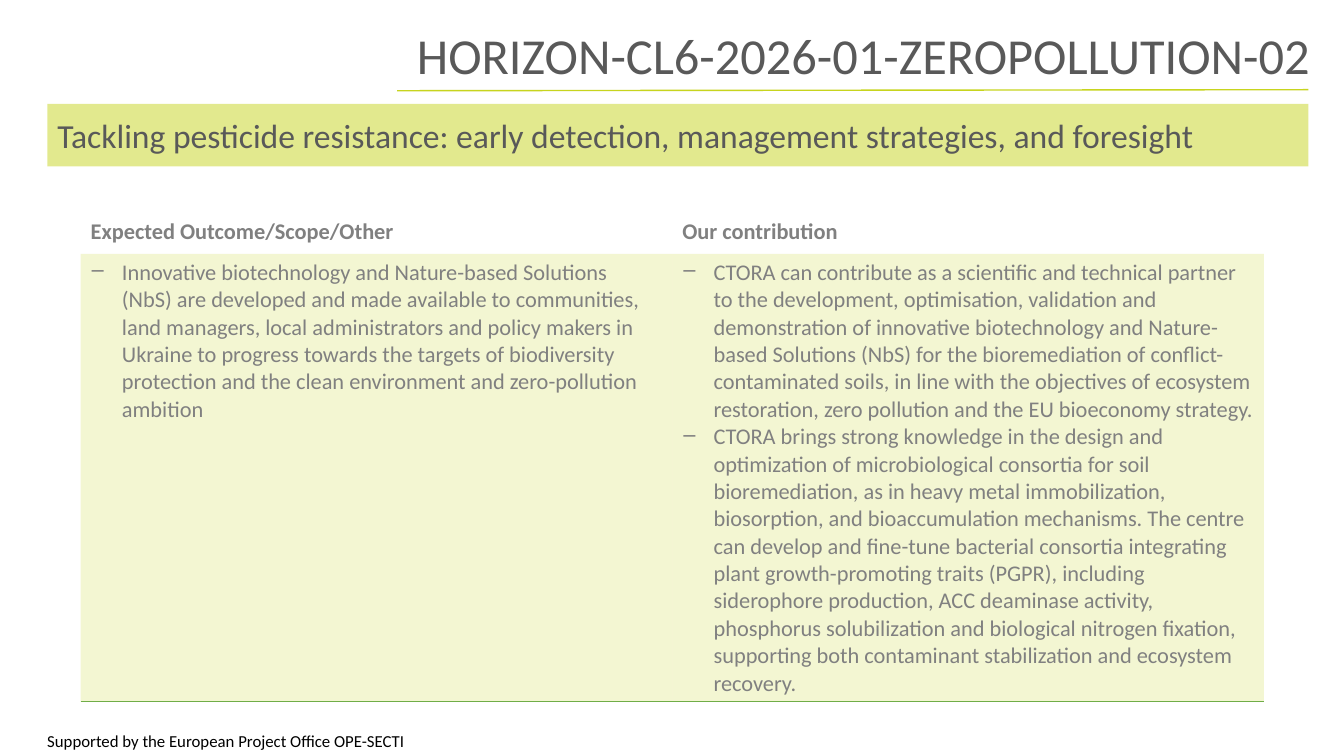
from pptx import Presentation
from pptx.dml.color import RGBColor
from pptx.enum.shapes import MSO_CONNECTOR, MSO_SHAPE
from pptx.enum.text import MSO_ANCHOR, MSO_AUTO_SIZE, PP_ALIGN
from pptx.oxml import parse_xml
from pptx.oxml.ns import nsdecls, qn
from pptx.oxml.xmlchemy import OxmlElement
from pptx.util import Inches, Pt

NO_STYLE = "{2D5ABB26-0587-4C30-8999-92F81FD0307C}"
OUTCOMES = [
    "Innovative biotechnology and Nature-based Solutions (NbS) are developed and made "
    "available to communities, land managers, local administrators and policy makers in "
    "Ukraine to progress towards the targets of biodiversity protection and the clean "
    "environment and zero-pollution ambition",
]
CONTRIBUTIONS = [
    "CTORA can contribute as a scientific and technical partner to the development, "
    "optimisation, validation and demonstration of innovative biotechnology and "
    "Nature-based Solutions (NbS) for the bioremediation of conflict-contaminated soils, "
    "in line with the objectives of ecosystem restoration, zero pollution and the EU "
    "bioeconomy strategy.",
    "CTORA brings strong knowledge in the design and optimization of microbiological "
    "consortia for soil bioremediation, as in heavy metal immobilization, biosorption, and "
    "bioaccumulation mechanisms. The centre can develop and fine-tune bacterial consortia "
    "integrating plant growth-promoting traits (PGPR), including siderophore production, "
    "ACC deaminase activity, phosphorus solubilization and biological nitrogen fixation, "
    "supporting both contaminant stabilization and ecosystem recovery.",
]


def rgb(code):
    """Turn a hex string into a colour."""
    return RGBColor.from_string(code)


def col(n):
    """Length of n grid columns, 40 to the slide width."""
    return Inches(n / 3)


def row(n):
    """Length of n grid rows, 30 to the slide height."""
    return Inches(n / 4)


def write(tf, lines, size=16, color="808080", bold=False, align=PP_ALIGN.LEFT,
          spacing=1.0, bullet=None):
    """Fill a text frame with one formatted paragraph per line."""
    tf.word_wrap = True
    for i, line in enumerate(lines):
        p = tf.add_paragraph() if i else tf.paragraphs[0]
        p.alignment, p.line_spacing = align, spacing
        if bullet:
            pPr = p._p.get_or_add_pPr()
            pPr.set("marL", str(Inches(0.31)))
            pPr.set("indent", str(-Inches(0.31)))
            bu = OxmlElement("a:buChar")
            bu.set("char", bullet)
            pPr.append(bu)
        r = p.add_run()
        r.text = line
        r.font.name, r.font.size, r.font.bold = Style.font, Pt(size), bold
        r.font.color.rgb = rgb(color)


def tint(fill, color, percent):
    """Set a see-through solid fill."""
    fill.solid()
    fill.fore_color.rgb = rgb(color)
    alpha = OxmlElement("a:alpha")
    alpha.set("val", str(percent * 1000))
    fill._xPr.find(qn("a:solidFill"))[0].append(alpha)


class Style:
    """Look of the deck and the slide being drawn."""

    font = "Calibri"
    lime, green, dark = "C7D41E", "70AD47", "595959"

    def __init__(self, prs):
        self.s = prs.slides.add_slide(prs.slide_layouts[5])

    def title(self, text, x, y, w, h):
        """Place the title placeholder."""
        sp = self.s.shapes.title
        sp.left, sp.top, sp.width, sp.height = col(x), row(y), col(w), row(h)
        tf = sp.text_frame
        tf.auto_size, tf.vertical_anchor = MSO_AUTO_SIZE.NONE, MSO_ANCHOR.BOTTOM
        write(tf, [text], size=36, color=self.dark, align=PP_ALIGN.RIGHT, spacing=0.9)

    def rule(self, x1, y1, x2, y2):
        """Draw a thin line."""
        ln = self.s.shapes.add_connector(MSO_CONNECTOR.STRAIGHT, col(x1), row(y1), col(x2), row(y2))
        ln.line.color.rgb, ln.line.width = rgb(self.lime), Pt(1)
        ln._element.spPr.append(OxmlElement("a:effectLst"))

    def band(self, text, x, y, w, h):
        """Draw the subtitle band."""
        sp = self.s.shapes.add_shape(MSO_SHAPE.RECTANGLE, col(x), row(y), col(w), row(h))
        sp.shadow.inherit = False
        tint(sp.fill, self.lime, 50)
        sp.line.fill.background()
        sp.text_frame.vertical_anchor = MSO_ANCHOR.MIDDLE
        write(sp.text_frame, [text], size=24, color=self.dark)

    def note(self, text, x, y, w, h):
        """Add the footer text."""
        sp = self.s.shapes.add_textbox(col(x), row(y), col(w), row(h))
        write(sp.text_frame, [text], size=12, color="000000", spacing=1.1)

    def table(self, columns, x, y, w, heights):
        """Add a table of headed bullet lists."""
        frame = self.s.shapes.add_table(2, len(columns), col(x), row(y), col(w), row(sum(heights)))
        tbl = frame.table
        tbl.horz_banding = False
        tbl._tbl.tblPr.find(qn("a:tableStyleId")).text = NO_STYLE
        for tr, height in zip(tbl.rows, heights):
            tr.height = row(height)
        for i, (head, items) in enumerate(columns.items()):
            tbl.columns[i].width = col(w / len(columns))
            top, body = tbl.cell(0, i), tbl.cell(1, i)
            top.fill.background()
            write(top.text_frame, [head], bold=True)
            write(body.text_frame, items, bullet="‒")
            tint(body.fill, self.lime, 20)
            body._tc.get_or_add_tcPr().insert(0, parse_xml(
                f'<a:lnB {nsdecls("a")} w="{Pt(1)}"><a:solidFill>'
                f'<a:srgbClr val="{self.green}"/></a:solidFill></a:lnB>'))


def main():
    """Build and save the slide."""
    prs = Presentation()
    prs.slide_width, prs.slide_height = col(40), row(30)
    d = Style(prs)
    d.note("Supported by the European Project Office OPE-SECTI", 1.11, 28.72, 11.64, 1.28)
    d.table({"Expected Outcome/Scope/Other": OUTCOMES, "Our contribution": CONTRIBUTIONS},
            2.4, 8.44, 35.22, (1.64, 17.76))
    d.rule(11.82, 3.6, 38.94, 3.56)
    d.title("HORIZON-CL6-2026-01-ZEROPOLLUTION-02", 9.3, 0.72, 30, 2.88)
    d.band("Tackling pesticide resistance: early detection, management strategies, and foresight",
           1.41, 4.12, 37.53, 2.48)
    prs.save("out.pptx")


if __name__ == "__main__":
    main()
